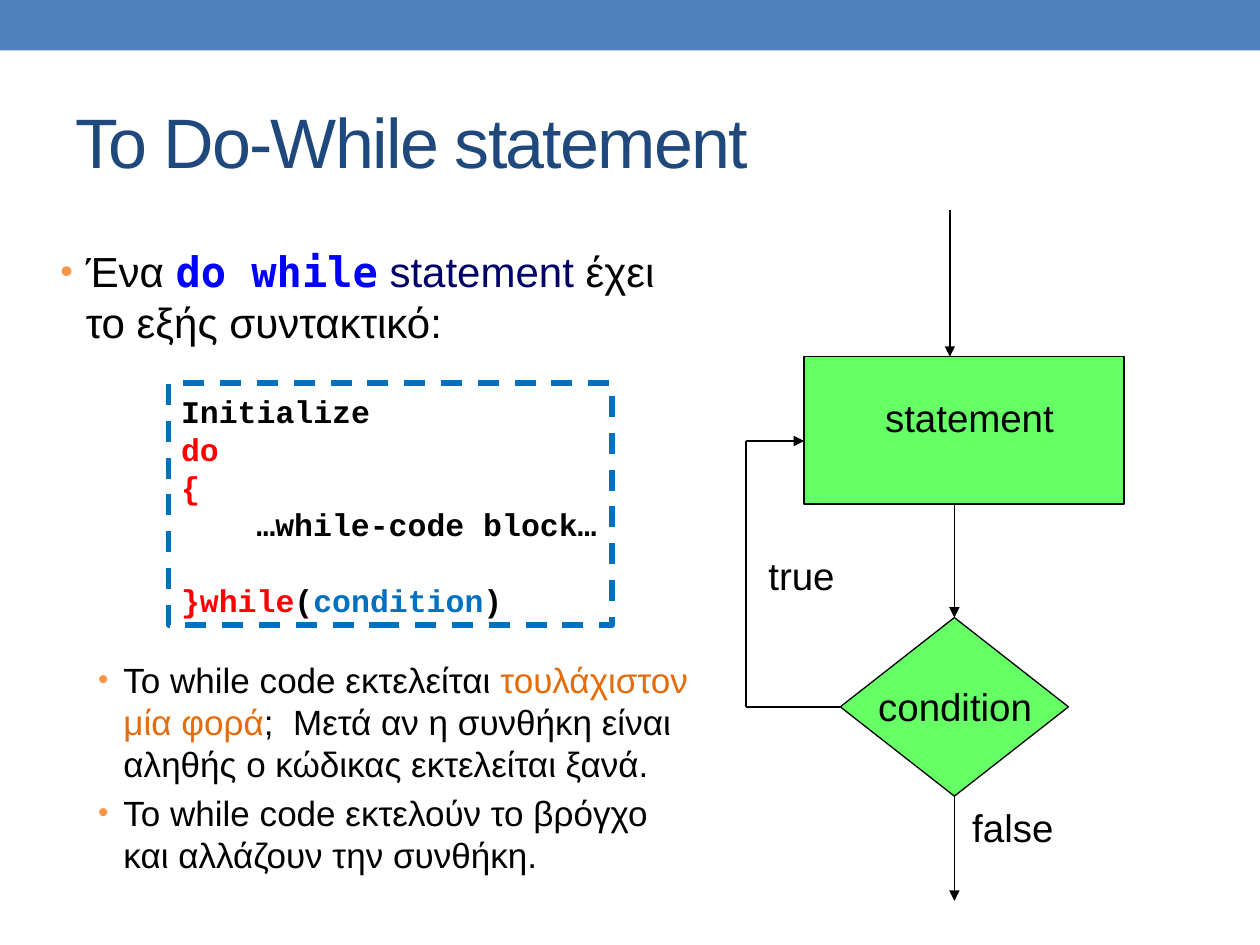
import pptx
import pptx.util
import pptx.dml.color
import pptx.enum.dml
import pptx.enum.shapes
import pptx.enum.text
import pptx.oxml
import pptx.oxml.ns
import lxml.etree

Cm, Pt = pptx.util.Cm, pptx.util.Pt
SHAPES = pptx.enum.shapes.MSO_SHAPE
ANCHORS = pptx.enum.text.MSO_ANCHOR
ALIGNMENTS = pptx.enum.text.PP_ALIGN
DRAWING = pptx.oxml.ns.nsdecls("a")

COLORS = {
    "banner": "4F81BD", "title": "1F497D", "text": "000000", "bullet": "F79646",
    "keyword": "0000FF", "term": "000066", "stress": "E46C0A",
    "code": "FF0000", "condition": "0070C0", "node": "66FF66",
}

# Content: each paragraph is a list of (text, color name, font, bold) runs
ARIAL, COURIER, DEJAVU = "Arial", "Courier New", "DejaVu Sans Mono"


def plain(text, color="text"):
    return (text, color, ARIAL, False)


def code(text, color="code"):
    return (text, color, COURIER, True)


TITLE = [[plain("Το Do-While statement", "title")]]
INTRO = [[plain("Ένα "), ("do while", "keyword", DEJAVU, True),
          plain(" statement ", "term"), plain("έχει το εξής συντακτικό:")]]
CODE = [
    [code("Initialize", "text")],
    [code("do")],
    [code("{")],
    [code("…while-code block…", "text")],
    [code("}while"), code("(", "text"), code("condition", "condition"), code(")", "text")],
]
NOTES = [
    [plain("To while code εκτελείται "), plain("τουλάχιστον μία φορά", "stress"),
     plain(";  Μετά αν η συνθήκη είναι αληθής ο κώδικας εκτελείται ξανά.")],
    [plain("To while code εκτελούν το βρόγχο και αλλάζουν την συνθήκη.")],
]
# Flowchart labels: text, left, top, width, alignment
LABELS = [
    ("statement", 16.61, 7.82, 5.87, ALIGNMENTS.CENTER),
    ("condition", 17.4, 13.64, 3.71, ALIGNMENTS.CENTER),
    ("false", 19.35, 16.08, 2.74, ALIGNMENTS.LEFT),
    ("true", 15.24, 11, 2.92, ALIGNMENTS.LEFT),
]
LINE_HEIGHT = 1.2

presentation = pptx.Presentation()
presentation.slide_width, presentation.slide_height = Cm(25.4), Cm(19.05)
slide = presentation.slides.add_slide(presentation.slide_layouts[6])


def rgb(name):
    return pptx.dml.color.RGBColor.from_string(COLORS[name])


def add_shape(kind, left, top, width, height, fill=None, line=None, weight=0.75):
    shape = slide.shapes.add_shape(kind, Cm(left), Cm(top), Cm(width), Cm(height))
    shape.shadow.inherit = False
    if fill:
        shape.fill.solid()
        shape.fill.fore_color.rgb = rgb(fill)
    else:
        shape.fill.background()
    if line:
        shape.line.color.rgb = rgb(line)
        shape.line.width = Pt(weight)
    else:
        shape.line.fill.background()
    return shape


def add_box(left, top, width, height):
    return slide.shapes.add_textbox(Cm(left), Cm(top), Cm(width), Cm(height))


def write(shape, paragraphs, size, align=ALIGNMENTS.LEFT, anchor=ANCHORS.TOP,
          wrap=True, gap=0, bullet_indent=None, tracking=None):
    frame = shape.text_frame
    frame.word_wrap = wrap
    frame.vertical_anchor = anchor
    for index, runs in enumerate(paragraphs):
        paragraph = frame.paragraphs[0] if index == 0 else frame.add_paragraph()
        paragraph.alignment = align
        paragraph.line_spacing = Pt(size * LINE_HEIGHT)
        paragraph.space_before = Pt(gap if index else 0)
        for text, color, font_name, bold in runs:
            run = paragraph.add_run()
            run.text = text
            run.font.name, run.font.size, run.font.bold = font_name, Pt(size), bold
            run.font.color.rgb = rgb(color)
            if tracking:
                run._r.get_or_add_rPr().set("spc", str(tracking * 100))
        if bullet_indent:
            add_bullet(paragraph, bullet_indent)


def add_bullet(paragraph, indent):
    properties = paragraph._p.get_or_add_pPr()
    properties.set("marL", str(Cm(indent)))
    properties.set("indent", str(-Cm(0.51)))
    for xml in (
        f'<a:buClr {DRAWING}><a:srgbClr val="{COLORS["bullet"]}"/></a:buClr>',
        f'<a:buSzPct {DRAWING} val="85000"/>',
        f'<a:buFont {DRAWING} typeface="Arial"/>',
        f'<a:buChar {DRAWING} char="•"/>',
    ):
        properties.append(pptx.oxml.parse_xml(xml))


def add_line(start, end, arrow=True):
    connector = slide.shapes.add_connector(
        pptx.enum.shapes.MSO_CONNECTOR.STRAIGHT, *(Cm(value) for value in start + end))
    connector.line.color.rgb = rgb("text")
    connector.line.width = Pt(0.75)
    if arrow:
        connector.line._get_or_add_ln().append(
            pptx.oxml.parse_xml(f'<a:tailEnd {DRAWING} type="triangle"/>'))
    lxml.etree.SubElement(connector._element.spPr, pptx.oxml.ns.qn("a:effectLst"))
    return connector


# Banner, title and bulleted text
add_shape(SHAPES.RECTANGLE, 0, 0, 25.4, 1.02, fill="banner")
write(add_box(0.97, 4.83, 13.28, 2.4), INTRO, 24, bullet_indent=0.51)
write(add_box(0.97, 13.14, 13.28, 4.8), NOTES, 20, gap=4, bullet_indent=1.27)
write(add_box(1.27, 1.47, 22.86, 2.74), TITLE, 40, anchor=ANCHORS.MIDDLE, tracking=-1)

# Flowchart nodes and labels
add_shape(SHAPES.RECTANGLE, 16.21, 7.19, 6.45, 2.97, fill="node", line="text")
condition = add_shape(SHAPES.DIAMOND, 16.94, 12.45, 4.6, 3.6, fill="node", line="text")
for text, left, top, width, align in LABELS:
    write(add_box(left, top, width, 1.19), [[plain(text)]], 22, align=align)

# Flowchart lines
LOOP_X, LOOP_TOP, LOOP_BOTTOM = 15.04, 8.89, 14.25
back = add_line((16.94, LOOP_BOTTOM), (LOOP_X, LOOP_BOTTOM), arrow=False)
back.begin_connect(condition, 1)
add_line((LOOP_X, LOOP_BOTTOM), (LOOP_X, LOOP_TOP), arrow=False)
add_line((LOOP_X, LOOP_TOP), (16.21, LOOP_TOP))
add_line((19.15, 4.24), (19.15, 7.19))
add_line((19.24, 10.16), (19.24, 12.45)).end_connect(condition, 0)
add_line((19.24, 16.05), (19.24, 18.16)).begin_connect(condition, 2)

# Code frame, with its body indented and a gap before the last line
frame = add_shape(SHAPES.RECTANGLE, 3.4, 7.72, 8.94, 4.88, line="condition", weight=3)
frame.line.dash_style = pptx.enum.dml.MSO_LINE.DASH
write(frame, CODE, 18, anchor=ANCHORS.BOTTOM, wrap=False)
body, closing = frame.text_frame.paragraphs[3:]
body._p.get_or_add_pPr().set("marL", str(Cm(1.52)))
closing.space_before = Pt(18 * LINE_HEIGHT)

presentation.save("out.pptx")
